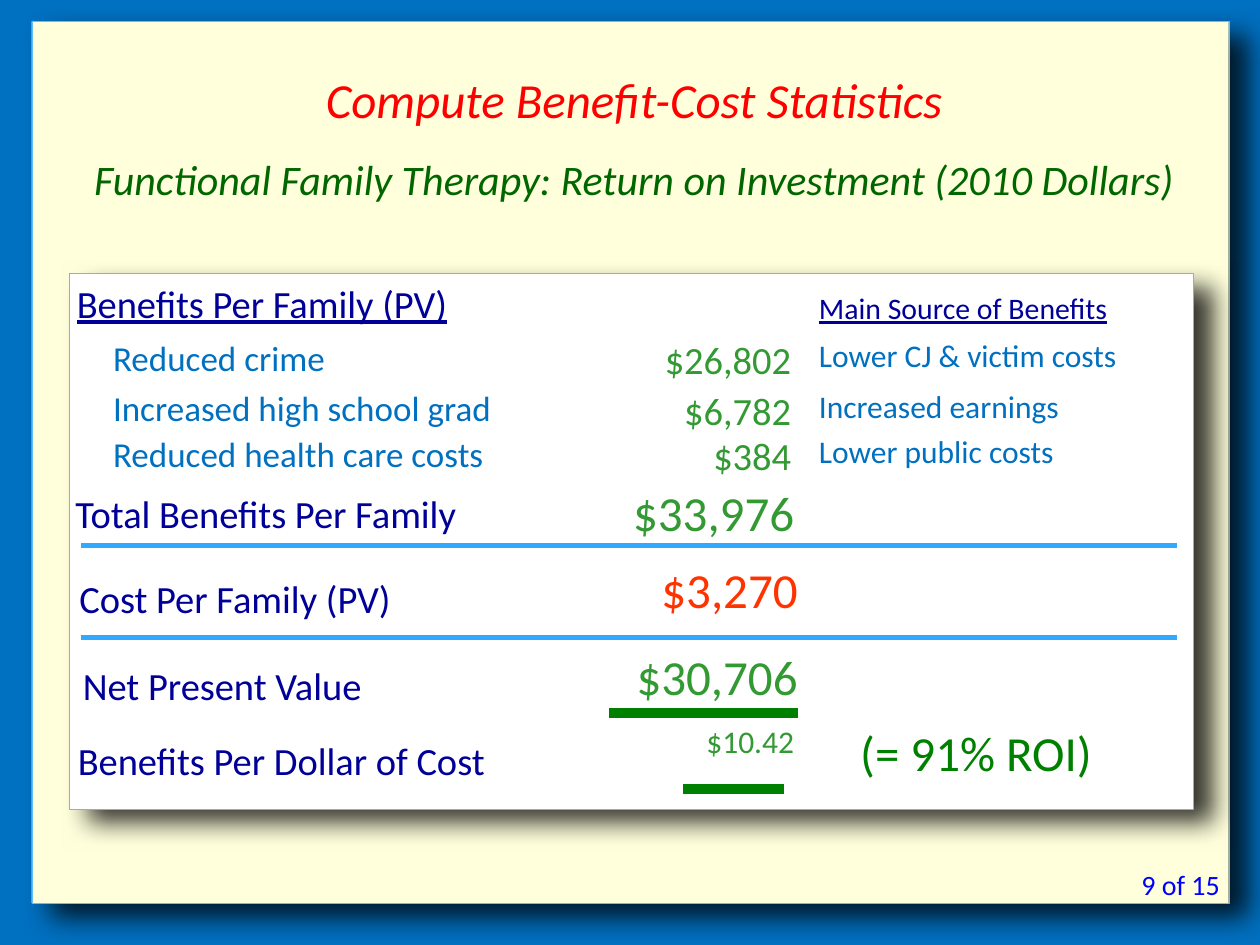
import pptx
import pptx.dml.color
import pptx.enum.shapes
import pptx.enum.text
import pptx.oxml
import pptx.oxml.ns
import pptx.util
from dataclasses import dataclass

Cm = pptx.util.Cm
Pt = pptx.util.Pt
ALIGN = pptx.enum.text.PP_ALIGN
ANCHOR = pptx.enum.text.MSO_ANCHOR


@dataclass(frozen=True)
class Theme:
    font: str = "Calibri"
    background: str = "0070C0"
    page: str = "FFFFDC"
    panel: str = "FFFFFF"
    edge: str = "60BDFF"
    title: str = "FF0000"
    subtitle: str = "006600"
    heading: str = "000099"
    item: str = "0070C0"
    benefit: str = "339933"
    cost: str = "FF3300"
    result: str = "008000"
    rule: str = "30A9FF"
    number: str = "0000FF"
    big: int = 28
    subtitle_size: int = 24
    medium: int = 22
    item_size: int = 20
    small: int = 18
    column_size: int = 17
    number_size: int = 16


BOXED = (0.25, 0.13, 0.25, 0.13)
LABEL = (0.25, 0, 0, 0)
AMOUNT = (0.25, 0.13, 0, 0.13)
FLUSH = (0, 0, 0, 0)


class SlideBuilder:
    def __init__(self, slide, theme):
        self.slide = slide
        self.theme = theme
        fill = slide.background.fill
        fill.solid()
        fill.fore_color.rgb = self.rgb(theme.background)

    def rgb(self, color):
        return pptx.dml.color.RGBColor.from_string(color)

    def card(self, x, y, w, h, color):
        sp = self.slide.shapes.add_shape(
            pptx.enum.shapes.MSO_SHAPE.RECTANGLE, Cm(x), Cm(y), Cm(w), Cm(h))
        sp.fill.solid()
        sp.fill.fore_color.rgb = self.rgb(color)
        sp.line.color.rgb = self.rgb(self.theme.edge)
        sp.line.width = Pt(0.05)
        sp.shadow.inherit = False
        effects = sp._element.spPr.find(pptx.oxml.ns.qn("a:effectLst"))
        effects.append(pptx.oxml.parse_xml(
            f'<a:outerShdw {pptx.oxml.ns.nsdecls("a")} blurRad="{Pt(15)}" '
            f'dist="{Pt(14)}" dir="{36 * 60000}" algn="tl" rotWithShape="0">'
            '<a:srgbClr val="000000"><a:alpha val="79000"/></a:srgbClr>'
            '</a:outerShdw>'))

    def box(self, x, y, w, h, insets=BOXED, anchor=ANCHOR.TOP):
        sp = self.slide.shapes.add_textbox(Cm(x), Cm(y), Cm(w), Cm(h))
        tf = sp.text_frame
        tf.word_wrap = True
        tf.vertical_anchor = anchor
        tf.margin_left, tf.margin_top, tf.margin_right, tf.margin_bottom = map(Cm, insets)
        return tf

    def run(self, p, text, size, color, align=ALIGN.LEFT, italic=False, underline=False):
        p.alignment = align
        r = p.add_run()
        r.text = text
        r.font.name = self.theme.font
        r.font.size = Pt(size)
        r.font.color.rgb = self.rgb(color)
        r.font.italic = italic
        r.font.underline = underline

    def text(self, x, y, w, h, text, size, color, insets=BOXED, **style):
        tf = self.box(x, y, w, h, insets)
        self.run(tf.paragraphs[0], text, size, color, **style)

    def title(self, x, y, w, h, title, subtitle):
        t = self.theme
        tf = self.box(x, y, w, h, anchor=ANCHOR.MIDDLE)
        self.run(tf.paragraphs[0], title, t.big, t.title, ALIGN.CENTER, italic=True)
        p = tf.add_paragraph()
        p.space_before = Pt(14.5)
        self.run(p, subtitle, t.subtitle_size, t.subtitle, ALIGN.CENTER, italic=True)

    def line(self, x1, x2, y, color, width):
        sp = self.slide.shapes.add_connector(
            pptx.enum.shapes.MSO_CONNECTOR.STRAIGHT, Cm(x1), Cm(y), Cm(x2), Cm(y))
        sp.line.color.rgb = self.rgb(color)
        sp.line.width = Pt(width)
        sp._element.spPr.append(pptx.oxml.parse_xml(
            f'<a:effectLst {pptx.oxml.ns.nsdecls("a")}/>'))


def main():
    prs = pptx.Presentation()
    prs.slide_width, prs.slide_height = Cm(25.4), Cm(19.05)
    t = Theme()
    s = SlideBuilder(prs.slides.add_slide(prs.slide_layouts[6]), t)

    s.card(0.64, 0.43, 24.13, 17.78, t.page)
    s.card(1.4, 5.51, 22.66, 10.8, t.panel)
    s.title(1.07, 1.27, 23.42, 2.97, "Compute Benefit-Cost Statistics",
            "Functional Family Therapy: Return on Investment (2010 Dollars)")

    s.text(1.3, 5.51, 10.57, 1.19, "Benefits Per Family (PV)",
           t.medium, t.heading, underline=True)
    s.text(16.51, 5.84, 7.19, 0.71, "Main Source of Benefits",
           t.column_size, t.heading, FLUSH, underline=True)

    benefits = [
        (6.78, "Reduced crime", "$26,802", "Lower CJ & victim costs"),
        (7.8, "Increased high school grad", "$6,782", "Increased earnings"),
        (8.71, "Reduced health care costs", "$384", "Lower public costs"),
    ]
    for y, label, amount, source in benefits:
        s.text(2.03, y, 12.67, 1.02, label, t.item_size, t.item, LABEL)
        s.text(12.17, y, 3.78, 1.02, amount, t.medium, t.benefit, LABEL, align=ALIGN.RIGHT)
        s.text(16.51, y, 8.18, 0.76, source, t.small, t.item, FLUSH)

    summary_labels = [
        (1.27, 9.88, "Total Benefits Per Family", LABEL),
        (1.35, 11.46, "Cost Per Family (PV)", BOXED),
        (1.42, 13.21, "Net Present Value", BOXED),
        (1.32, 14.73, "Benefits Per Dollar of Cost", BOXED),
    ]
    for x, y, label, insets in summary_labels:
        s.text(x, y, 11.6, 1.19, label, t.medium, t.heading, insets)

    summary_amounts = [
        (11.56, 9.73, 4.45, 1.3, "$33,976", t.big, t.benefit, LABEL),
        (11.99, 11.15, 4.09, 1.45, "$3,270", t.big, t.cost, AMOUNT),
        (11.43, 12.9, 4.65, 1.45, "$30,706", t.big, t.benefit, AMOUNT),
        (11.79, 14.43, 4.22, 1.02, "$10.42", t.small, t.benefit, AMOUNT),
    ]
    for amount in summary_amounts:
        s.text(*amount, align=ALIGN.RIGHT)

    for y in (11, 12.85):
        s.line(1.63, 23.72, y, t.rule, 3)
    for x1, x2, y in ((12.27, 16.08, 14.38), (13.77, 15.8, 15.9)):
        s.line(x1, x2, y, t.result, 5.75)

    s.text(16.08, 14.43, 7.19, 1.45, "(= 91% ROI)", t.big, t.result, align=ALIGN.CENTER)
    s.text(21.39, 17.35, 3.45, 0.94, "9 of 15", t.number_size, t.number, align=ALIGN.RIGHT)

    prs.save("out.pptx")


if __name__ == "__main__":
    main()
